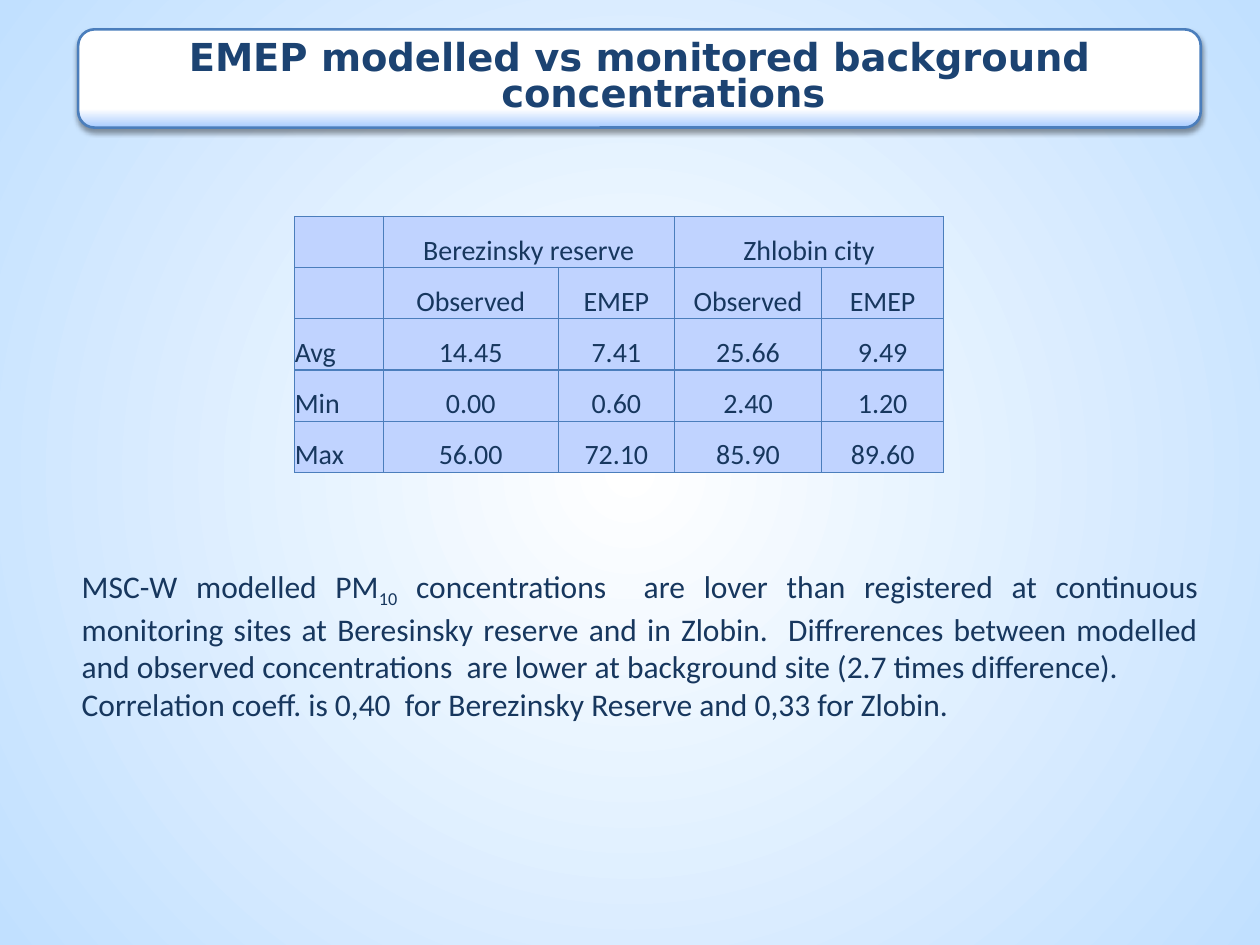
from dataclasses import dataclass

from lxml.etree import SubElement
from pptx import Presentation
from pptx.dml.color import RGBColor
from pptx.enum.shapes import MSO_SHAPE
from pptx.enum.text import MSO_ANCHOR, PP_ALIGN
from pptx.oxml.ns import qn
from pptx.util import Inches, Pt

WIDTH, HEIGHT = Inches(10), Inches(7.5)
NAVY, TITLE_BLUE, LINE_BLUE, CELL_BLUE = "17375E", "1C4372", "4B7EBC", "C0D3FF"


@dataclass(frozen=True)
class Area:
    left: float
    top: float
    width: float
    height: float

    def lengths(self) -> tuple[int, int, int, int]:
        return (int(self.left * WIDTH), int(self.top * HEIGHT),
                int(self.width * WIDTH), int(self.height * HEIGHT))


@dataclass(frozen=True)
class Piece:
    text: str
    baseline: int = 0


TITLE_AREA = Area(0.062, 0.031, 0.891, 0.104)
TABLE_AREA = Area(0.234, 0.229, 0.515, 0.271)
NOTE_AREA = Area(0.055, 0.593, 0.906, 0.175)
COLUMN_SHARES = (0.136, 0.27, 0.179, 0.227, 0.188)
ROWS = (
    ("", "Berezinsky reserve", "", "Zhlobin city", ""),
    ("", "Observed", "EMEP", "Observed", "EMEP"),
    ("Avg", "14.45", "7.41", "25.66", "9.49"),
    ("Min", "0.00", "0.60", "2.40", "1.20"),
    ("Max", "56.00", "72.10", "85.90", "89.60"),
)
NOTE = (
    (
        Piece("MSC-W modelled PM"),
        Piece("10", -25),
        Piece(" concentrations  are lover than registered at continuous monitoring "
              "sites at Beresinsky reserve and in Zlobin.  Diffrerences between "
              "modelled and observed concentrations  are lower at background site "
              "(2.7 times difference)."),
    ),
    (Piece("Correlation coeff. is 0,40  for Berezinsky Reserve and 0,33 for Zlobin."),),
)


def colour(code: str) -> RGBColor:
    return RGBColor.from_string(code)


def add_xml(parent, tag: str, **attributes):
    return SubElement(parent, qn(f"a:{tag}"),
                      {name: str(value) for name, value in attributes.items()})


def write(paragraph, text: str, *, size: float, font: str = "Calibri",
          code: str = NAVY, bold: bool = False, baseline: int = 0,
          align: PP_ALIGN = PP_ALIGN.LEFT) -> None:
    paragraph.alignment = align
    span = paragraph.add_run()
    span.text = text
    span.font.size = Pt(size)
    span.font.name = font
    span.font.bold = bold
    span.font.color.rgb = colour(code)
    if baseline:
        span.font._element.set("baseline", str(baseline * 1000))


def set_gradient(fill, owner, stops: tuple[tuple[int, str], ...],
                 angle: int | None = None) -> None:
    fill.gradient()
    gradient = next(owner.iter(qn("a:gradFill")))
    for child in list(gradient):
        gradient.remove(child)
    stop_list = add_xml(gradient, "gsLst")
    for position, code in stops:
        stop = add_xml(stop_list, "gs", pos=position * 1000)
        add_xml(stop, "srgbClr", val=code)
    if angle is None:
        centre = add_xml(gradient, "path", path="circle")
        add_xml(centre, "fillToRect", l=50000, t=50000, r=50000, b=50000)
    else:
        add_xml(gradient, "lin", ang=angle * 60000, scaled=0)


def add_shadow(shape) -> None:
    shape.shadow.inherit = False
    effects = next(shape.element.iter(qn("a:effectLst")))
    shadow = add_xml(effects, "outerShdw", blurRad=Pt(3.1), dist=Pt(1.6),
                     dir=90 * 60000, algn="t", rotWithShape=0)
    add_xml(add_xml(shadow, "srgbClr", val="000000"), "alpha", val=38000)


def add_title(slide) -> None:
    box = slide.shapes.add_shape(MSO_SHAPE.ROUNDED_RECTANGLE, *TITLE_AREA.lengths())
    set_gradient(box.fill, box.element, ((0, "A7CBFF"), (19, "FFFFFF")), angle=270)
    box.line.color.rgb = colour(LINE_BLUE)
    box.line.width = Pt(1.5)
    add_shadow(box)
    box.text_frame.word_wrap = True
    box.text_frame.vertical_anchor = MSO_ANCHOR.MIDDLE
    para = box.text_frame.paragraphs[0]
    para.line_spacing = 0.8
    para.space_before = Pt(4.4)
    write(para, "EMEP modelled vs monitored background concentrations", size=22,
          font="DejaVu Sans", code=TITLE_BLUE, bold=True, align=PP_ALIGN.CENTER)
    properties = para._p.get_or_add_pPr()
    properties.set("marL", str(Inches(0.38)))
    properties.set("indent", str(Inches(-0.38)))


def format_cell(cell) -> None:
    cell.margin_left = cell.margin_right = cell.margin_top = cell.margin_bottom = 0
    cell.vertical_anchor = MSO_ANCHOR.BOTTOM
    properties = cell._tc.get_or_add_tcPr()
    for side in ("lnL", "lnR", "lnT", "lnB"):
        border = add_xml(properties, side, w=Pt(0.75))
        add_xml(add_xml(border, "solidFill"), "srgbClr", val=LINE_BLUE)
    cell.fill.solid()
    cell.fill.fore_color.rgb = colour(CELL_BLUE)


def add_values(slide) -> None:
    left, top, width, height = TABLE_AREA.lengths()
    table = slide.shapes.add_table(len(ROWS), len(COLUMN_SHARES),
                                   left, top, width, height).table
    table.first_row = table.horz_banding = False
    for column, share in zip(table.columns, COLUMN_SHARES):
        column.width = int(width * share)
    for row_index, values in enumerate(ROWS):
        for column_index, text in enumerate(values):
            cell = table.cell(row_index, column_index)
            format_cell(cell)
            if text:
                align = PP_ALIGN.CENTER if column_index else PP_ALIGN.LEFT
                write(cell.text_frame.paragraphs[0], text, size=16, align=align)
    for start in (1, 3):
        table.cell(0, start).merge(table.cell(0, start + 1))


def add_note(slide) -> None:
    frame = slide.shapes.add_textbox(*NOTE_AREA.lengths()).text_frame
    frame.word_wrap = True
    for index, pieces in enumerate(NOTE):
        para = frame.add_paragraph() if index else frame.paragraphs[0]
        for piece in pieces:
            write(para, piece.text, size=18, baseline=piece.baseline,
                  align=PP_ALIGN.JUSTIFY)


def main() -> None:
    deck = Presentation()
    deck.slide_width, deck.slide_height = WIDTH, HEIGHT
    slide = deck.slides.add_slide(deck.slide_layouts[6])
    set_gradient(slide.background.fill, slide.element,
                 ((0, "FFFFFF"), (100, "C1E0FF")))
    add_values(slide)
    add_note(slide)
    add_title(slide)
    deck.save("out.pptx")


if __name__ == "__main__":
    main()
